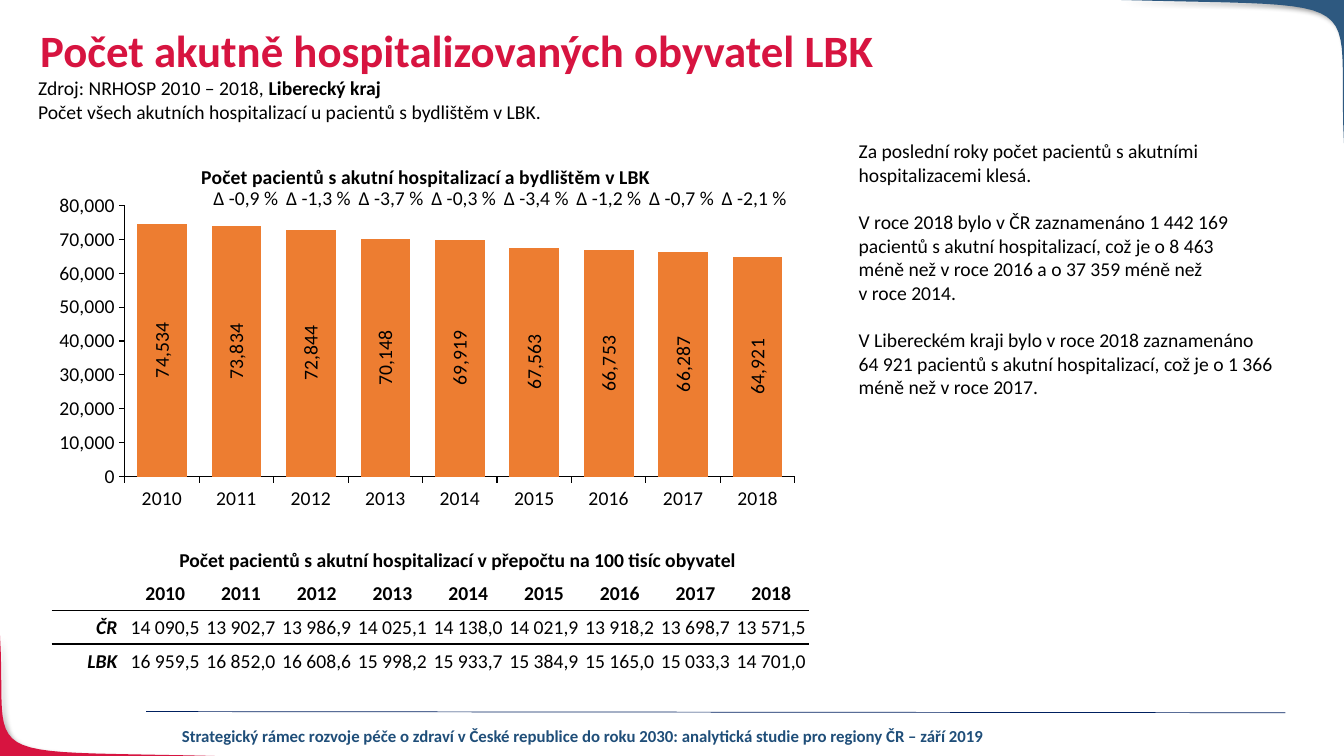
from lxml.etree import SubElement
from pptx import Presentation
from pptx.chart.data import CategoryChartData
from pptx.dml.color import RGBColor
from pptx.enum.chart import XL_CHART_TYPE as ChartType, XL_LABEL_POSITION as LabelPos, XL_TICK_MARK as Tick
from pptx.enum.shapes import MSO_CONNECTOR as Connector
from pptx.enum.text import MSO_ANCHOR as Anchor, PP_ALIGN as Align
from pptx.oxml import parse_xml
from pptx.oxml.ns import nsdecls, qn
from pptx.util import Cm, Pt

FONT = "Calibri"
BLACK, RED, BLUE, NAVY, ORANGE = "000000", "D71440", "2E5980", "002060", "ED7D31"
FOOTER_BLUE = "1F4E79"
NO_GRID_STYLE = "{2D5ABB26-0587-4C30-8999-92F81FD0307C}"

YEARS = [str(year) for year in range(2010, 2019)]
PATIENTS = [74534, 73834, 72844, 70148, 69919, 67563, 66753, 66287, 64921]
CHANGES = ["-0,9", "-1,3", "-3,7", "-0,3", "-3,4", "-1,2", "-0,7", "-2,1"]
RATES = [
    ["", *YEARS],
    ["ČR", "14 090,5", "13 902,7", "13 986,9", "14 025,1", "14 138,0",
     "14 021,9", "13 918,2", "13 698,7", "13 571,5"],
    ["LBK", "16 959,5", "16 852,0", "16 608,6", "15 998,2", "15 933,7",
     "15 384,9", "15 165,0", "15 033,3", "14 701,0"],
]
SOURCE = [
    [("Zdroj: NRHOSP 2010 – 2018, ", False), ("Liberecký kraj", True)],
    [("Počet všech akutních hospitalizací u pacientů s bydlištěm v LBK.", False)],
]
COMMENTS = [
    "Za poslední roky počet pacientů s akutními\vhospitalizacemi klesá.",
    "V roce 2018 bylo v ČR zaznamenáno 1 442 169\vpacientů s akutní hospitalizací, "
    "což je o 8 463\vméně než v roce 2016 a o 37 359 méně než\vv roce 2014.",
    "V Libereckém kraji bylo v roce 2018 zaznamenáno\v64 921 pacientů s akutní "
    "hospitalizací, což je o 1 366\vméně než v roce 2017.",
]


def rgb(hex_colour):
    return RGBColor.from_string(hex_colour)


def set_font(font, size=14, colour=BLACK, **formats):
    for name, value in {"name": FONT, "size": Pt(size), **formats}.items():
        setattr(font, name, value)
    font.color.rgb = rgb(colour)


def add_text(slide, box, paragraphs, wrap=True, align=Align.LEFT, gap=0, **font_formats):
    """Each paragraph is a list of (text, bold) runs."""
    frame = slide.shapes.add_textbox(*map(Cm, box)).text_frame
    frame.word_wrap = wrap
    for index, runs in enumerate(paragraphs):
        paragraph = frame.add_paragraph() if index else frame.paragraphs[0]
        paragraph.alignment = align
        if index and gap:
            paragraph.space_before = Pt(gap)
        for text, bold in runs:
            for part, line in enumerate(text.split("\v")):
                if part:
                    paragraph.add_line_break()
                run = paragraph.add_run()
                run.text = line
                set_font(run.font, bold=bold, **font_formats)


def add_corner(slide, colour, curve, corner, steps=24):
    """Fill the area between a cubic Bézier curve and a slide corner."""
    points = []
    for step in range(steps + 1):
        t = step / steps
        weights = ((1 - t) ** 3, 3 * t * (1 - t) ** 2, 3 * t * t * (1 - t), t ** 3)
        points.append(tuple(
            Cm(sum(w * point[axis] for w, point in zip(weights, curve))) for axis in (0, 1)))
    builder = slide.shapes.build_freeform(*points[0])
    builder.add_line_segments([*points[1:], tuple(map(Cm, corner))], close=True)
    shape = builder.convert_to_shape()
    shape.fill.solid()
    shape.fill.fore_color.rgb = rgb(colour)
    shape.line.fill.background()
    shape.shadow.inherit = False
    effects = shape._element.spPr.find(qn("a:effectLst"))
    effects.append(parse_xml(
        f'<a:outerShdw {nsdecls("a")} blurRad="50800" dist="38100" dir="2700000">'
        '<a:srgbClr val="000000"><a:alpha val="40000"/></a:srgbClr></a:outerShdw>'))


def add_rule(slide, start, end):
    rule = slide.shapes.add_connector(Connector.STRAIGHT, *map(Cm, (*start, *end)))
    rule.line.color.rgb = rgb(NAVY)
    rule.line.width = Pt(0.5)
    SubElement(rule._element.spPr, qn("a:effectLst"))


def set_layout(element, index, **fractions):
    """Place a chart part by fractions of the chart area."""
    for old in element.findall(qn("c:layout")):
        element.remove(old)
    target = '<c:layoutTarget val="inner"/>' if "w" in fractions else ""
    modes = "".join(f'<c:{key}Mode val="edge"/>' for key in fractions if key in "xy")
    values = "".join(f'<c:{key} val="{value}"/>' for key, value in fractions.items())
    element.insert(index, parse_xml(
        f'<c:layout {nsdecls("c")}><c:manualLayout>{target}{modes}{values}'
        '</c:manualLayout></c:layout>'))


def add_patient_chart(slide, box):
    data = CategoryChartData(number_format="#,##0")
    data.categories = YEARS
    data.add_series("Series 1", PATIENTS)
    chart = slide.shapes.add_chart(ChartType.COLUMN_STACKED, *map(Cm, box), data).chart
    set_font(chart.font, 10)
    chart.has_legend = False

    title = chart.chart_title
    title.text_frame.text = "Počet pacientů s akutní hospitalizací a bydlištěm v LBK"
    set_font(title.text_frame.paragraphs[0].runs[0].font, bold=True)
    set_layout(title._element, 1, x=0.2, y=0.06)
    set_layout(chart._chartSpace.chart.plotArea, 0, x=0.105, y=0.18, w=0.876, h=0.712)

    for axis in (chart.category_axis, chart.value_axis):
        axis.has_major_gridlines = False
        axis.major_tick_mark = Tick.OUTSIDE
        axis.minor_tick_mark = Tick.NONE
        axis.format.line.color.rgb = rgb(BLACK)
        axis.format.line.width = Pt(0.75)
        set_font(axis.tick_labels.font)
    scale = {"minimum_scale": 0, "maximum_scale": 80000, "major_unit": 10000}
    for name, value in scale.items():
        setattr(chart.value_axis, name, value)
    chart.value_axis.tick_labels.number_format = "#,##0"
    chart.value_axis.tick_labels.number_format_is_linked = False

    plot = chart.plots[0]
    for name, value in {"gap_width": 50, "overlap": 100, "vary_by_categories": False}.items():
        setattr(plot, name, value)
    series = plot.series[0]
    series.format.fill.solid()
    series.format.fill.fore_color.rgb = rgb(ORANGE)
    labels = series.data_labels
    label_formats = {"show_value": True, "position": LabelPos.CENTER,
                     "number_format": "#,##0", "number_format_is_linked": False}
    for name, value in label_formats.items():
        setattr(labels, name, value)
    set_font(labels.font)
    turned = labels._element.find(".//" + qn("a:bodyPr"))
    turned.set("rot", "-5400000")
    turned.set("vert", "horz")


def underline_cell(cell):
    cell._tc.get_or_add_tcPr().insert(0, parse_xml(
        f'<a:lnB {nsdecls("a")} w="12700"><a:solidFill><a:srgbClr val="{BLACK}"/>'
        '</a:solidFill></a:lnB>'))


def add_plain_table(slide, left, top, column_width, row_height, rows, anchor, headed=False):
    """A headed table has bold years, bold italic row labels and ruled rows."""
    count = len(rows[0])
    table = slide.shapes.add_table(
        len(rows), count, Cm(left), Cm(top),
        Cm(column_width * count), Cm(row_height * len(rows))).table
    table._tbl.tblPr.find(qn("a:tableStyleId")).text = NO_GRID_STYLE
    table.first_row = table.horz_banding = False
    for r, row in enumerate(rows):
        for c, text in enumerate(row):
            cell = table.cell(r, c)
            is_label = headed and c == 0
            margins = {"margin_left": Cm(0.03), "margin_right": Cm(0.25 if is_label else 0.03),
                       "margin_top": Cm(0.03), "margin_bottom": 0}
            for name, value in {**margins, "vertical_anchor": anchor}.items():
                setattr(cell, name, value)
            cell.fill.background()
            if headed and r < len(rows) - 1:
                underline_cell(cell)
            if text:
                paragraph = cell.text_frame.paragraphs[0]
                paragraph.alignment = Align.RIGHT if is_label else Align.CENTER
                run = paragraph.add_run()
                run.text = text
                set_font(run.font, bold=headed and (r == 0 or c == 0), italic=is_label)


def set_title(slide, box, text):
    title = slide.shapes.title
    for name, value in zip(("left", "top", "width", "height"), map(Cm, box)):
        setattr(title, name, value)
    frame = title.text_frame
    frame.text = text
    frame.vertical_anchor = Anchor.MIDDLE
    paragraph = frame.paragraphs[0]
    paragraph.alignment = Align.LEFT
    paragraph.line_spacing = 0.9
    set_font(paragraph.runs[0].font, 32, RED, bold=True)


def main():
    deck = Presentation()
    deck.slide_width, deck.slide_height = Cm(33.87), Cm(19.05)
    slide = deck.slides.add_slide(deck.slide_layouts[5])

    add_corner(slide, RED, [(5.41, 19.05), (-0.86, 18.9), (0.2, 19.28), (0, 16)], (0, 19.05))
    add_corner(slide, BLUE, [(28.22, 0), (34.8, 0.18), (33.68, -0.25), (33.87, 3.61)], (33.87, 0))
    add_rule(slide, (3.68, 17.93), (32.39, 17.96))
    add_text(slide, (4.27, 18.16, 20.85, 0.76),
             [[("Strategický rámec rozvoje péče o zdraví v České republice do roku 2030: "
                "analytická studie pro regiony ČR – září 2019", True)]],
             align=Align.CENTER, size=12, colour=FOOTER_BLUE)

    set_title(slide, (0.76, 0.46, 29.21, 1.75), "Počet akutně hospitalizovaných obyvatel LBK")
    add_text(slide, (0.71, 1.8, 13.39, 1.45), SOURCE, wrap=False)
    add_text(slide, (21.39, 3.38, 11.28, 7.44), [[(text, False)] for text in COMMENTS], gap=17)

    add_patient_chart(slide, (1.12, 3.45, 19.28, 9.6))
    add_plain_table(slide, 3.45, 4.67, 1.83, 1.14,
                    [["", *(f"Δ {change} %" for change in CHANGES)]], Anchor.TOP)
    add_text(slide, (4.27, 13.69, 14.71, 0.86),
             [[("Počet pacientů s akutní hospitalizací v přepočtu na 100 tisíc obyvatel", True)]],
             wrap=False)
    add_plain_table(slide, 1.3, 14.53, 1.91, 0.85, RATES, Anchor.MIDDLE, headed=True)

    deck.save("out.pptx")


if __name__ == "__main__":
    main()
